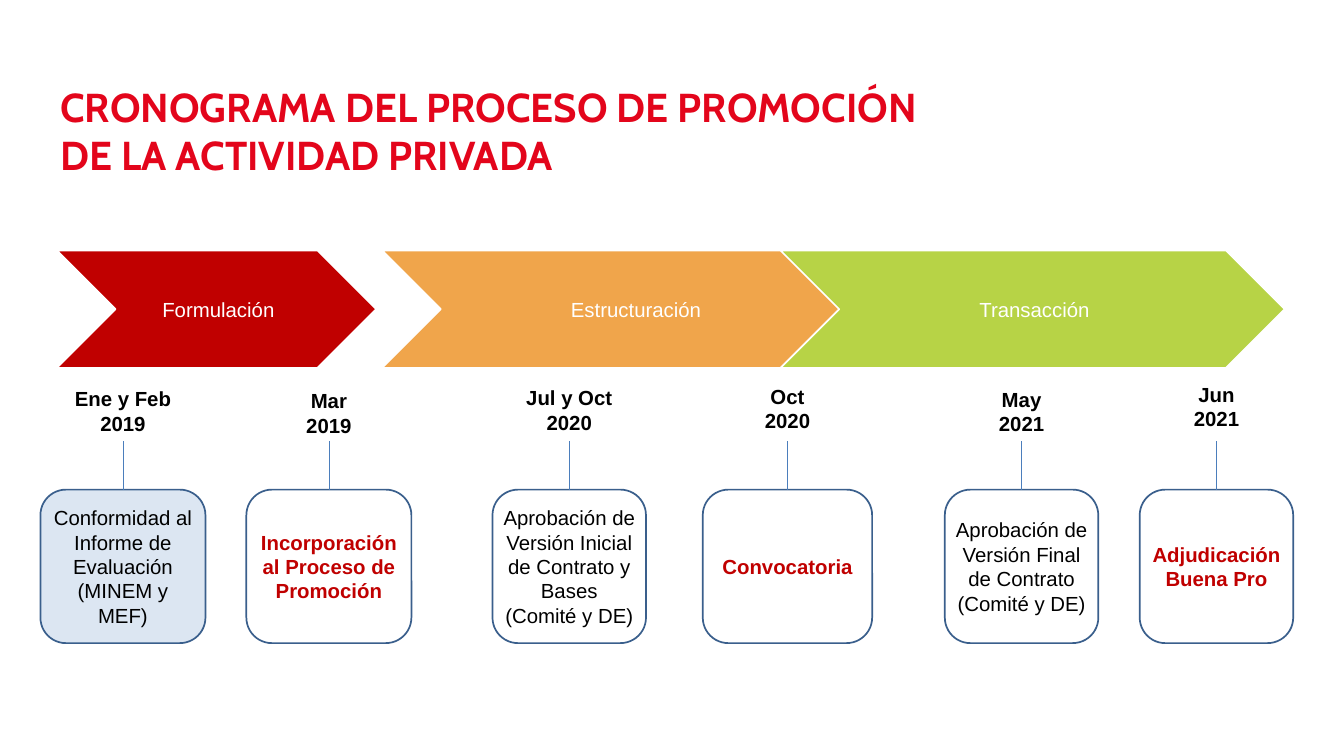
from pptx import Presentation
from pptx.dml.color import RGBColor
from pptx.enum.shapes import MSO_CONNECTOR, MSO_SHAPE
from pptx.enum.text import MSO_ANCHOR, PP_ALIGN
from pptx.oxml.ns import qn
from pptx.util import Cm, Pt
from lxml import etree

STRAIGHT = MSO_CONNECTOR.STRAIGHT
CHEVRON, ELLIPSE, ROUNDED = MSO_SHAPE.CHEVRON, MSO_SHAPE.OVAL, MSO_SHAPE.ROUNDED_RECTANGLE
LEFT, CENTER = PP_ALIGN.LEFT, PP_ALIGN.CENTER
TOP, MIDDLE = MSO_ANCHOR.TOP, MSO_ANCHOR.MIDDLE

COLORS = {
    "title": "E3051B",
    "red": "C00000",
    "orange": "F0A54B",
    "green": "B7D346",
    "white": "FFFFFF",
    "black": "000000",
    "pale": "DCE6F2",
    "border": "3A5F8C",
    "line": "4B7EBC",
}

PHASES = [
    ("Formulación", 2.36, 13.28, "red"),
    ("Estructuración", 15.88, 20.96, "orange"),
    ("Transacción", 32.44, 20.96, "green"),
]

MILESTONES = [
    ("Ene y Feb\v2019", 15.75, 6.07, 2.67, 5.11, 6.86,
     "Conformidad al Informe de Evaluación\n(MINEM y MEF)", "pale", False),
    ("Mar\v2019", 15.82, 4.88, 2.67, 13.67, 6.86,
     "Incorporación al Proceso de Promoción", "white", True),
    ("Jul y Oct\v2020", 15.75, 5.44, 2.57, 23.66, 6.38,
     "Aprobación de Versión Inicial de Contrato y Bases\v(Comité y DE)", "white", False),
    ("Oct\v2020", 15.82, 5.05, 2.29, 32.73, 7.04, "Convocatoria", "white", True),
    ("May\v2021", 15.95, 4.6, 2.29, 42.46, 6.38,
     "Aprobación de Versión Final de Contrato\v(Comité y DE)", "white", False),
    ("Jun\v2021", 15.82, 4.39, 2.13, 50.56, 6.38, "Adjudicación\nBuena Pro", "white", True),
]


class TimelineSlide:
    """Holds the style and the current slide of the timeline."""

    def __init__(self, slide):
        self.slide = slide
        self.font = "Arial"
        self.size = 24

    def color(self, name):
        return RGBColor.from_string(COLORS[name])

    def set_text(self, shape, text, color, bold=False, font=None, size=None,
                 align=CENTER, anchor=MIDDLE, insets=(0.13, 0.05, 0.13, 0.05)):
        frame = shape.text_frame
        frame.text = text
        frame.word_wrap = True
        frame.vertical_anchor = anchor
        (frame.margin_left, frame.margin_top,
         frame.margin_right, frame.margin_bottom) = map(Cm, insets)
        for paragraph in frame.paragraphs:
            paragraph.alignment = align
            for run in paragraph.runs:
                run.font.name = font or self.font
                run.font.size = Pt(size or self.size)
                run.font.bold = bold
                run.font.color.rgb = self.color(color)

    def title(self, text):
        title = self.slide.shapes.title
        title.left, title.top, title.width, title.height = map(Cm, (2.51, 3.4, 36.96, 4.06))
        self.set_text(title, text, "title", True, "Cabin", 47.5, LEFT, TOP, (0, 0, 0, 0))

    def shape(self, kind, left, top, width, height, fill=None, border=None):
        shape = self.slide.shapes.add_shape(kind, Cm(left), Cm(top), Cm(width), Cm(height))
        shape.shadow.inherit = False
        if fill:
            shape.fill.solid()
            shape.fill.fore_color.rgb = self.color(fill)
        else:
            shape.fill.background()
        if border:
            shape.line.color.rgb = self.color(border)
            shape.line.width = Pt(2)
        else:
            shape.line.fill.background()
        return shape

    def phase(self, text, left, width, fill):
        chevron = self.shape(CHEVRON, left, 10.41, width, 4.88, fill, "white")
        self.set_text(chevron, text, "white", insets=(0.25, 0.1, 0.1, 0.1))

    def date(self, text, center, top, width, height):
        ellipse = self.shape(ELLIPSE, center - width / 2, top, width, height)
        self.set_text(ellipse, text, "black", True)

    def box(self, text, center, width, fill, is_key):
        box = self.shape(ROUNDED, center - width / 2, 20.35, width, 6.38, fill, "border")
        self.set_text(box, text, "red" if is_key else "black", is_key)
        return box

    def stem(self, center, box):
        stem = self.slide.shapes.add_connector(STRAIGHT, Cm(center), Cm(18.34), Cm(center), box.top)
        stem.end_connect(box, 0)
        stem.line.color.rgb = self.color("line")
        stem.line.width = Pt(0.75)
        etree.SubElement(stem._element.spPr, qn("a:effectLst"))


def main():
    presentation = Presentation()
    presentation.slide_width, presentation.slide_height = Cm(55.86), Cm(31.42)
    timeline = TimelineSlide(presentation.slides.add_slide(presentation.slide_layouts[5]))

    timeline.title("CRONOGRAMA DEL PROCESO DE PROMOCIÓN DE LA ACTIVIDAD PRIVADA")
    for phase in PHASES:
        timeline.phase(*phase)
    for date, top, date_width, date_height, center, box_width, text, fill, is_key in MILESTONES:
        timeline.date(date, center, top, date_width, date_height)
        timeline.stem(center, timeline.box(text, center, box_width, fill, is_key))

    presentation.save("out.pptx")


if __name__ == "__main__":
    main()
